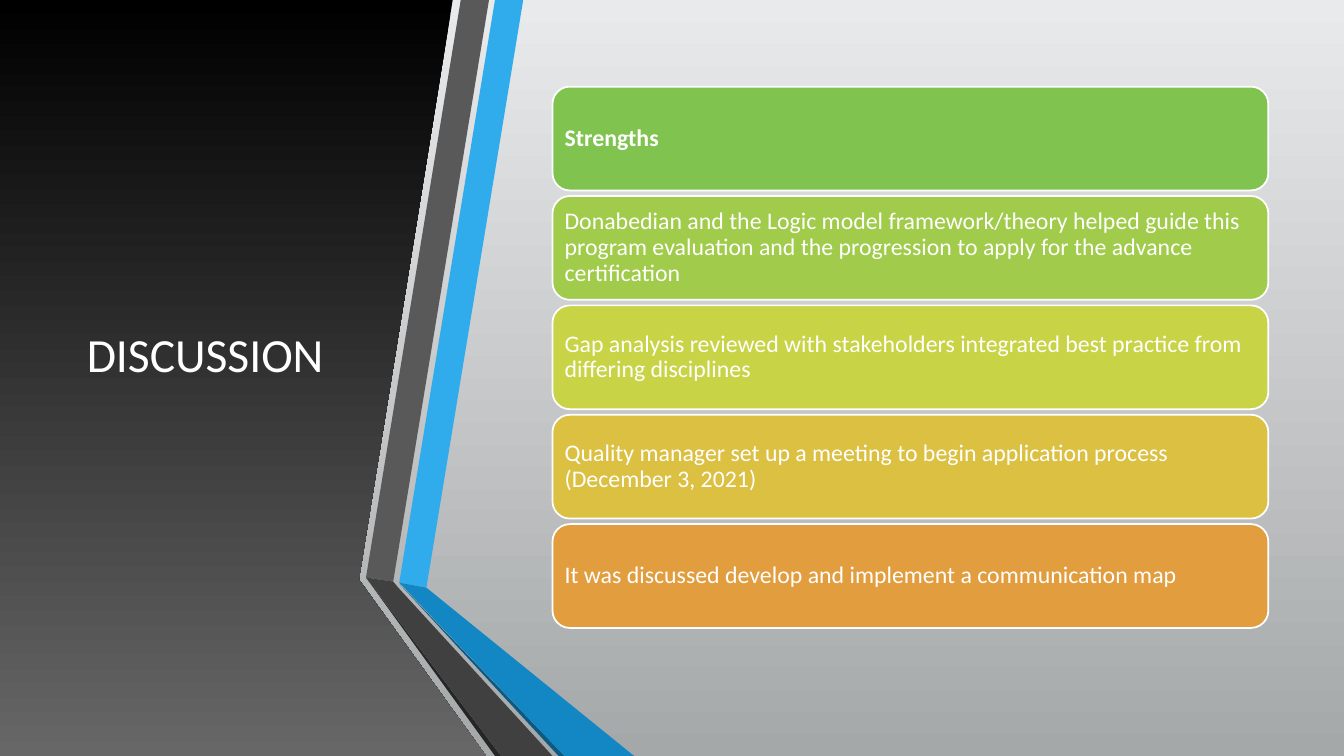
from pptx import Presentation
from pptx.dml.color import RGBColor
from pptx.enum.shapes import MSO_SHAPE
from pptx.enum.text import MSO_ANCHOR, PP_ALIGN
from pptx.util import Inches, Pt

WIDTH, HEIGHT = 13.33, 7.5
FONT = "Calibri"
COLORS = {
    "white": "FFFFFF",
    "background top": "E9EAEB", "background bottom": "A5A8A9",
    "panel top": "000000", "panel bottom": "676767",
    "blue": "30ACEC", "blue fold": "1287C3", "blue edge": "0C5A82",
    "gray": "595959", "gray fold": "404040", "gray edge": "262626",
}
PANEL = [(0, 0), (4.49, 0), (3.56, 5.75), (4.82, 7.5), (0, 7.5)]
# Outlines in inches from the left end of the ribbon
RIBBON = {
    "blue": [(0.33, 5.78), (0.6, 5.83), (1.56, 0), (1.28, 0)],
    "gray": [(1.22, 0), (0.94, 0), (0, 5.73), (0.27, 5.77)],
    "gray edge": [(0, 5.73), (1.28, 7.5), (1.34, 7.5)],
    "blue edge": [(0.33, 5.79), (1.91, 7.5), (1.97, 7.5)],
    "blue fold": [(0.33, 5.78), (1.97, 7.5), (2.66, 7.5), (0.6, 5.83)],
    "gray fold": [(0, 5.73), (1.34, 7.5), (1.85, 7.5), (0.32, 5.83), (0.27, 5.77)],
}
CARDS = [
    ("Strengths", "80C34F"),
    ("Donabedian and the Logic model framework/theory helped guide this program "
     "evaluation and the progression to apply for the advance certification", "A1CB4A"),
    ("Gap analysis reviewed with stakeholders integrated best practice from "
     "differing disciplines", "C8D346"),
    ("Quality manager set up a meeting to begin application process "
     "(December 3, 2021)", "DBC042"),
    ("It was discussed develop and implement a communication map", "E29D3E"),
]


def rgb(name):
    return RGBColor.from_string(COLORS[name])


def fill_downward(fill, top, bottom):
    fill.gradient()
    fill.gradient_angle = 270
    for stop, name in zip(fill.gradient_stops, (top, bottom)):
        stop.color.rgb = rgb(name)


def add_outline(slide, points, left=0):
    corners = [(Inches(left + x), Inches(y)) for x, y in points]
    builder = slide.shapes.build_freeform(*corners[0], scale=1.0)
    builder.add_line_segments(corners[1:], close=True)
    shape = builder.convert_to_shape()
    shape.shadow.inherit = False
    shape.line.fill.background()
    return shape


def add_panel(slide):
    panel = add_outline(slide, PANEL)
    fill_downward(panel.fill, "panel top", "panel bottom")


def add_ribbon(slide, left):
    for name, points in RIBBON.items():
        band = add_outline(slide, points, left)
        band.fill.solid()
        band.fill.fore_color.rgb = rgb(name)


def style_text(shape, text, size, alignment, inset):
    frame = shape.text_frame
    frame.text = text
    frame.word_wrap = True
    frame.vertical_anchor = MSO_ANCHOR.MIDDLE
    frame.margin_left = frame.margin_right = Inches(inset)
    frame.margin_top = frame.margin_bottom = Inches(inset)
    paragraph = frame.paragraphs[0]
    paragraph.alignment = alignment
    paragraph.line_spacing = 0.9
    paragraph.font.name = FONT
    paragraph.font.size = Pt(size)
    paragraph.font.color.rgb = rgb("white")
    return paragraph


def add_title(slide, text, left, top, width, height):
    title = slide.shapes.title
    title.left, title.top = Inches(left), Inches(top)
    title.width, title.height = Inches(width), Inches(height)
    style_text(title, text, 34, PP_ALIGN.CENTER, 0.1)
    # Keeps the title in front of the panel
    slide.shapes._spTree.append(title._element)


def add_cards(slide, left, top, width, height, gap=0.055):
    card_height = (height + gap) / len(CARDS) - gap
    for row, (text, color) in enumerate(CARDS):
        card = slide.shapes.add_shape(
            MSO_SHAPE.ROUNDED_RECTANGLE, Inches(left),
            Inches(top + row * (card_height + gap)),
            Inches(width), Inches(card_height))
        card.shadow.inherit = False
        card.fill.solid()
        card.fill.fore_color.rgb = RGBColor.from_string(color)
        card.line.color.rgb = rgb("white")
        card.line.width = Pt(1.25)
        paragraph = style_text(card, text, 17, PP_ALIGN.LEFT, 0.07)
        paragraph.font.bold = row == 0


def main():
    presentation = Presentation()
    presentation.slide_width = Inches(WIDTH)
    presentation.slide_height = Inches(HEIGHT)
    title_only = presentation.slide_layouts.get_by_name("Title Only")
    slide = presentation.slides.add_slide(title_only)
    fill_downward(slide.background.fill, "background top", "background bottom")
    add_panel(slide)
    add_title(slide, "DISCUSSION", 0.59, 0.75, 2.89, 5.58)
    add_ribbon(slide, 3.63)
    add_cards(slide, 5.48, 0.86, 7.1, 5.37)
    presentation.save("out.pptx")


if __name__ == "__main__":
    main()
